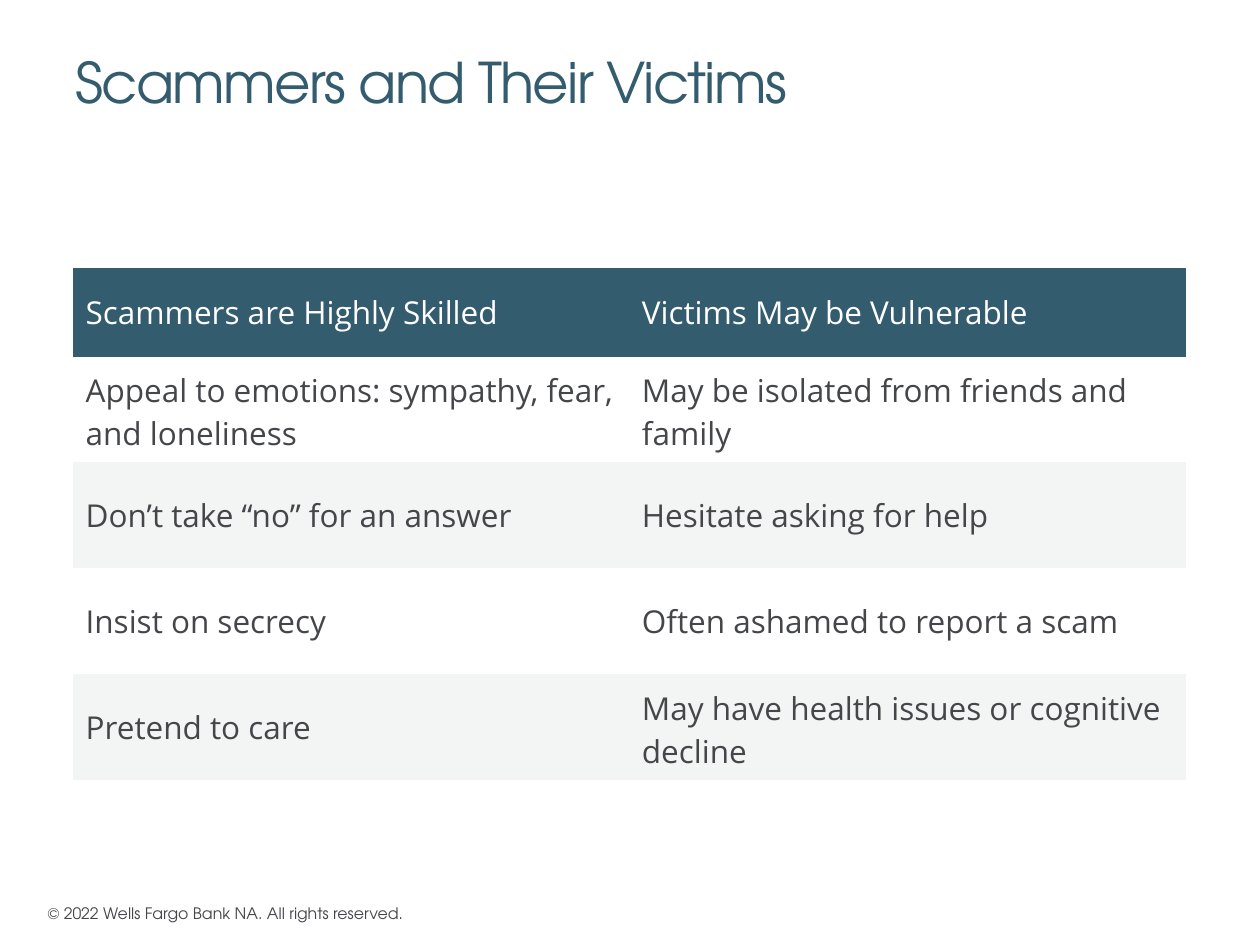
from dataclasses import dataclass

from pptx import Presentation
from pptx.dml.color import RGBColor
from pptx.enum.text import MSO_ANCHOR, PP_ALIGN
from pptx.oxml.ns import qn
from pptx.util import Inches, Pt

LEFT = PP_ALIGN.LEFT
TOP = MSO_ANCHOR.TOP
MIDDLE = MSO_ANCHOR.MIDDLE
TITLE_ONLY = 5
NO_GRID_STYLE = "{2D5ABB26-0587-4C30-8999-92F81FD0307C}"


@dataclass(frozen=True)
class Theme:
    heading_font: str = "TeX Gyre Adventor"
    body_font: str = "Open Sans"
    teal: str = "345C6F"
    ink: str = "44464A"
    white: str = "FFFFFF"
    band: str = "F2F5F3"
    title_size: int = 32
    table_size: int = 18
    footer_size: int = 9


ROWS = [
    ("Scammers are Highly Skilled", "Victims May be Vulnerable"),
    ("Appeal to emotions: sympathy, fear, and loneliness",
     "May be isolated from friends and family"),
    ("Don’t take “no” for an answer", "Hesitate asking for help"),
    ("Insist on secrecy", "Often ashamed to report a scam"),
    ("Pretend to care", "May have health issues or cognitive decline"),
]


class PageBuilder:
    """Holds the theme and the page being filled."""

    def __init__(self, page, theme):
        self.page = page
        self.theme = theme

    def style(self, para, font, size, color):
        para.alignment = LEFT
        for span in para.runs:
            span.font.name = font
            span.font.size = Pt(size)
            span.font.bold = False
            span.font.color.rgb = RGBColor.from_string(color)

    def title(self, text, left, top, width, height):
        box = self.page.shapes.title
        box.left, box.top = Inches(left), Inches(top)
        box.width, box.height = Inches(width), Inches(height)
        frame = box.text_frame
        frame.text = text
        frame.word_wrap = True
        frame.vertical_anchor = TOP
        frame.margin_left = frame.margin_right = 0
        frame.margin_top = frame.margin_bottom = 0
        para = frame.paragraphs[0]
        para.line_spacing = 1.05
        self.style(para, self.theme.heading_font, self.theme.title_size,
                   self.theme.teal)
        # Letter spacing in hundredths of a point
        para.runs[0].font._element.set("spc", "-100")

    def footer(self, text, left, top, width, height):
        box = self.page.shapes.add_textbox(
            Inches(left), Inches(top), Inches(width), Inches(height))
        frame = box.text_frame
        frame.text = text
        frame.word_wrap = False
        self.style(frame.paragraphs[0], self.theme.heading_font,
                   self.theme.footer_size, self.theme.ink)

    def table(self, rows, left, top, width, header_height, row_height):
        """Adds a table with a dark header and shading on every second body row."""
        height = header_height + row_height * (len(rows) - 1)
        frame = self.page.shapes.add_table(
            len(rows), len(rows[0]),
            Inches(left), Inches(top), Inches(width), Inches(height))
        for style_id in frame._element.iter(qn("a:tableStyleId")):
            style_id.text = NO_GRID_STYLE
        table = frame.table
        table.horz_banding = False
        for index, texts in enumerate(rows):
            is_header = index == 0
            table.rows[index].height = Inches(
                header_height if is_header else row_height)
            if is_header:
                fill, color = self.theme.teal, self.theme.white
            else:
                fill = self.theme.white if index % 2 else self.theme.band
                color = self.theme.ink
            for cell, text in zip(table.rows[index].cells, texts):
                self.cell(cell, text, fill, color)

    def cell(self, cell, text, fill, color):
        cell.text_frame.text = text
        cell.vertical_anchor = MIDDLE
        cell.margin_left = cell.margin_right = Inches(0.1)
        cell.margin_top = cell.margin_bottom = Inches(0.1)
        cell.fill.solid()
        cell.fill.fore_color.rgb = RGBColor.from_string(fill)
        self.style(cell.text_frame.paragraphs[0], self.theme.body_font,
                   self.theme.table_size, color)


def main():
    deck = Presentation()
    deck.slide_width, deck.slide_height = Inches(10), Inches(7.5)
    page = deck.slides.add_slide(deck.slide_layouts[TITLE_ONLY])
    builder = PageBuilder(page, Theme())
    builder.footer("© 2022 Wells Fargo Bank NA. All rights reserved.",
                   0.28, 7.12, 3.05, 0.25)
    builder.title("Scammers and Their Victims", 0.6, 0.35, 9, 0.57)
    builder.table(ROWS, 0.58, 2.13, 8.83, header_height=0.7, row_height=0.84)
    deck.save("out.pptx")


if __name__ == "__main__":
    main()
